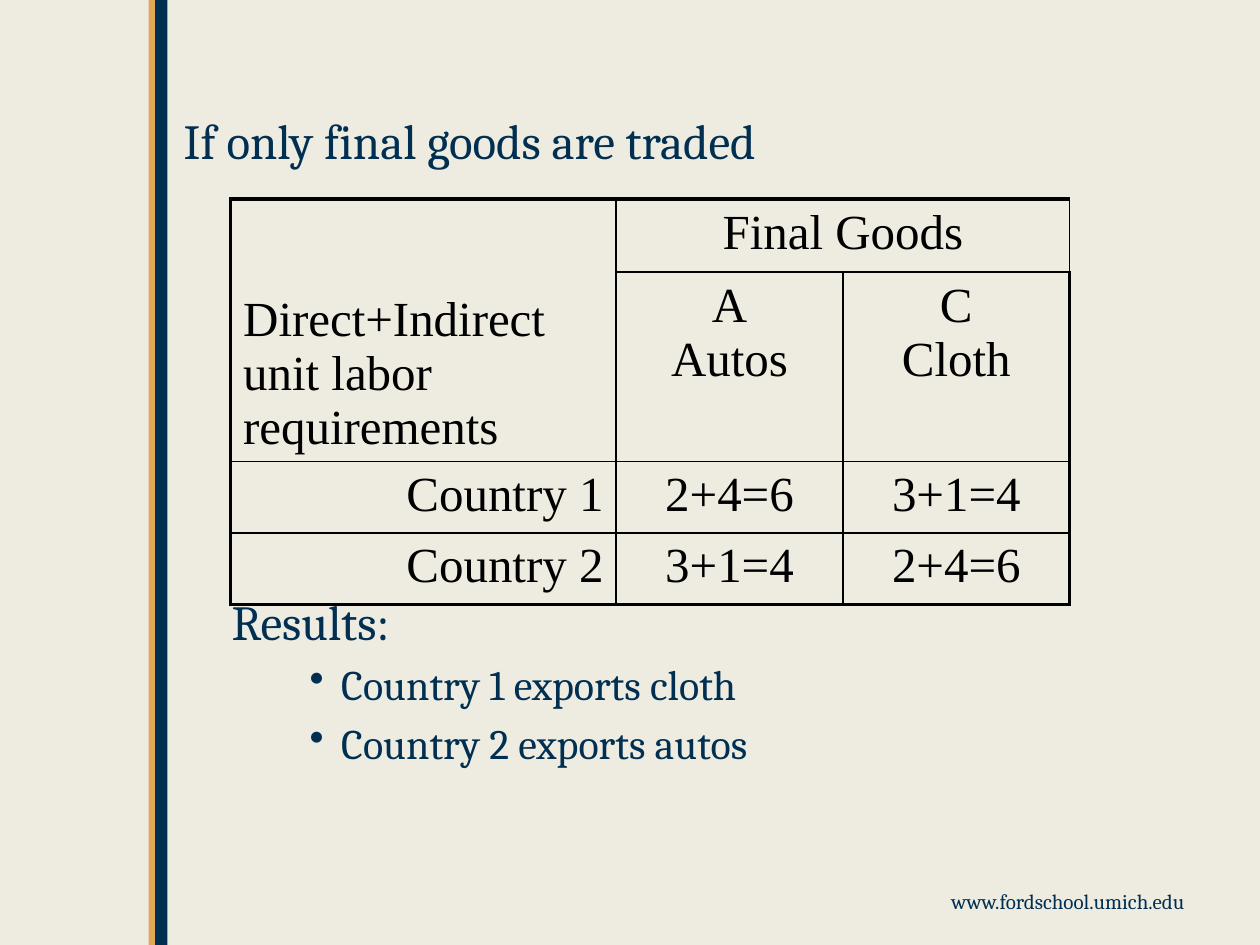
"""Build the slide on trade in final goods: labor requirement table and results."""
from lxml import etree
from pptx import Presentation
from pptx.dml.color import RGBColor
from pptx.enum.shapes import MSO_SHAPE
from pptx.enum.text import MSO_ANCHOR, PP_ALIGN
from pptx.oxml.ns import qn
from pptx.util import Inches, Pt

LEFT, CENTER, RIGHT = PP_ALIGN.LEFT, PP_ALIGN.CENTER, PP_ALIGN.RIGHT
BOTTOM, TOP = MSO_ANCHOR.BOTTOM, MSO_ANCHOR.TOP
RECTANGLE = MSO_SHAPE.RECTANGLE

COLORS = {"paper": "EEECE1", "navy": "002F52", "gold": "E3A856", "ink": "000000"}
SERIF, TABLE_FONT = "Cambria", "Times New Roman"
WIDTH, HEIGHT = 10, 7.5

STRIPES = [("navy", 1.23, 0.1), ("gold", 1.18, 0.05)]
FOOTER = "www.fordschool.umich.edu"
# text, size, space before, left margin, first-line indent, bullet
BODY = [
    ("If only final goods are traded", 28, 0, 0.38, -0.38, None),
    ("Results:", 28, 241, 0.38, 0, None),
    ("Country 1 exports cloth", 24, 4.8, 1.25, -0.25, "•"),
    ("Country 2 exports autos", 24, 4.8, 1.25, -0.25, "•"),
]
LABOR = [
    ["Direct+Indirect unit labor requirements", "Final Goods", ""],
    ["", "A\nAutos", "C\nCloth"],
    ["Country 1", "2+4=6", "3+1=4"],
    ["Country 2", "3+1=4", "2+4=6"],
]
MERGES = [((0, 0), (1, 0)), ((0, 1), (0, 2))]
COLUMN_WIDTHS = [3.06, 1.8, 1.8]
ROW_HEIGHTS = [0.58, 1.4, 0.53, 0.53]
OUTER_LINE, INNER_LINE = 2.25, 1


def rgb(name):
    return RGBColor.from_string(COLORS[name])


def style(paragraph, size, face, color, align=LEFT):
    paragraph.alignment = align
    paragraph.font.size = Pt(size)
    paragraph.font.name = face
    paragraph.font.color.rgb = rgb(color)


def add_text_frame(slide, left, top, width, height):
    box = slide.shapes.add_textbox(*map(Inches, (left, top, width, height)))
    box.text_frame.word_wrap = True
    return box.text_frame


def add_stripes(slide):
    for color, left, width in STRIPES:
        stripe = slide.shapes.add_shape(
            RECTANGLE, Inches(left), 0, Inches(width), Inches(HEIGHT))
        stripe.shadow.inherit = False
        stripe.fill.solid()
        stripe.fill.fore_color.rgb = rgb(color)
        stripe.line.fill.background()


def add_body(slide):
    frame = add_text_frame(slide, 1.36, 0.83, 7.92, 5.5)
    for i, (text, size, before, margin, indent, bullet) in enumerate(BODY):
        paragraph = frame.add_paragraph() if i else frame.paragraphs[0]
        paragraph.text = text
        paragraph.space_before = Pt(before)
        properties = paragraph._p.get_or_add_pPr()
        properties.set("marL", str(Inches(margin)))
        properties.set("indent", str(Inches(indent)))
        if bullet:
            etree.SubElement(properties, qn("a:buChar"), char=bullet)
        style(paragraph, size, SERIF, "navy")


def draw_borders(cell, outer_sides):
    properties = cell._tc.get_or_add_tcPr()
    for side, is_outer in zip("LRTB", outer_sides):
        weight = Pt(OUTER_LINE if is_outer else INNER_LINE)
        line = etree.SubElement(properties, qn(f"a:ln{side}"), w=str(weight))
        fill = etree.SubElement(line, qn("a:solidFill"))
        etree.SubElement(fill, qn("a:srgbClr"), val=COLORS["ink"])


def add_labor_table(slide):
    last_row, last_column = len(LABOR) - 1, len(COLUMN_WIDTHS) - 1
    table = slide.shapes.add_table(
        len(LABOR), len(COLUMN_WIDTHS), Inches(1.83), Inches(1.58),
        Inches(sum(COLUMN_WIDTHS)), Inches(sum(ROW_HEIGHTS))).table
    table.first_row = table.horz_banding = False
    for column, width in zip(table.columns, COLUMN_WIDTHS):
        column.width = Inches(width)
    for row, height in zip(table.rows, ROW_HEIGHTS):
        row.height = Inches(height)
    for start, end in MERGES:
        table.cell(*start).merge(table.cell(*end))
    for r, texts in enumerate(LABOR):
        for c, text in enumerate(texts):
            cell = table.cell(r, c)
            draw_borders(cell, (c == 0, c == last_column, r == 0, r == last_row))
            cell.fill.background()
            cell.vertical_anchor = BOTTOM if r == c == 0 else TOP
            cell.text = text
            align = CENTER if c else RIGHT if r > 1 else LEFT
            for paragraph in cell.text_frame.paragraphs:
                style(paragraph, 28, TABLE_FONT, "ink", align)


def main():
    deck = Presentation()
    deck.slide_width, deck.slide_height = Inches(WIDTH), Inches(HEIGHT)
    slide = deck.slides.add_slide(deck.slide_layouts[6])
    slide.background.fill.solid()
    slide.background.fill.fore_color.rgb = rgb("paper")
    add_stripes(slide)
    footer = add_text_frame(slide, 7, 7, 2.5, 0.3).paragraphs[0]
    footer.text = FOOTER
    style(footer, 12, SERIF, "navy", RIGHT)
    add_body(slide)
    add_labor_table(slide)
    deck.save("out.pptx")


if __name__ == "__main__":
    main()
